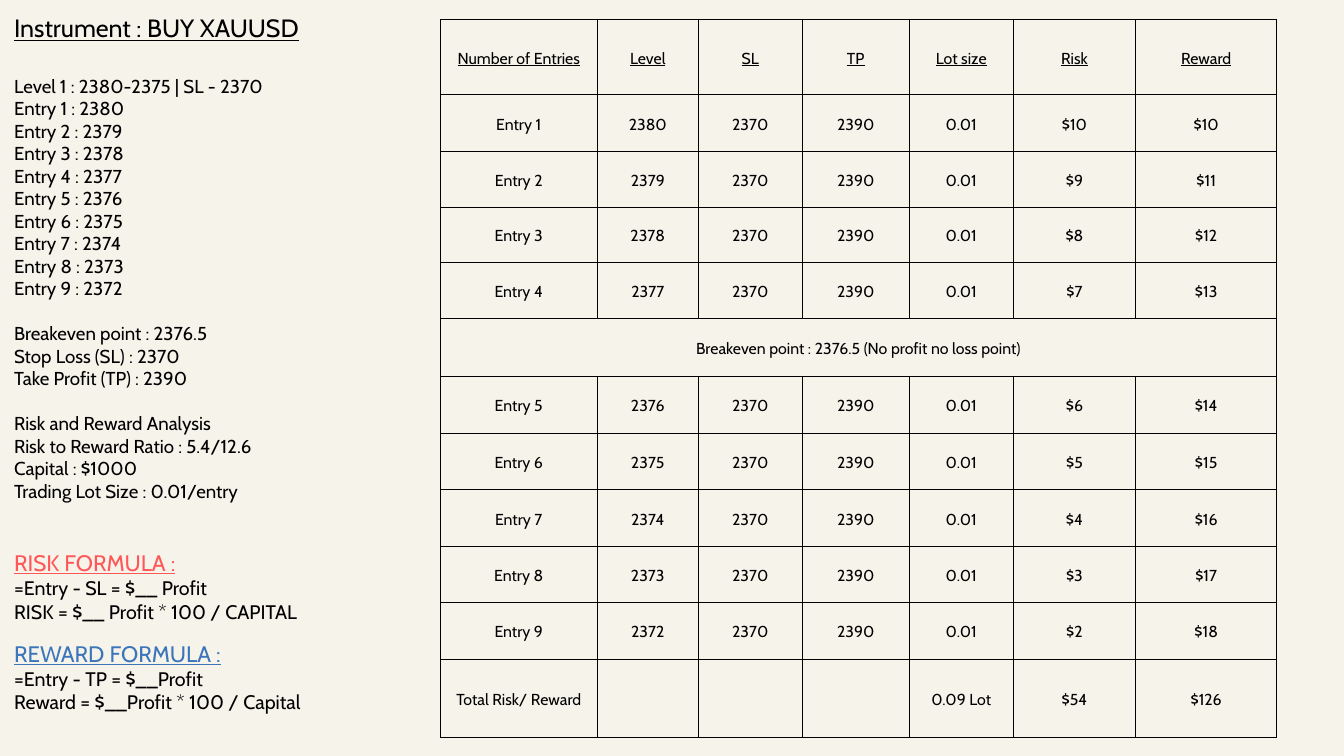
from dataclasses import dataclass

from lxml import etree
from pptx import Presentation
from pptx.dml.color import RGBColor
from pptx.enum import text as t
from pptx.oxml import ns
from pptx.util import Inches, Pt

FONT = "Cabin"
BLACK = RGBColor(0x00, 0x00, 0x00)
CREAM = RGBColor(0xF6, 0xF3, 0xEB)
RED = RGBColor(0xFF, 0x57, 0x57)
BLUE = RGBColor(0x3B, 0x75, 0xBA)

LEFT = 0.21
STOP_LOSS = 2370
TAKE_PROFIT = 2390
LEVELS = [2381 - number for number in range(1, 10)]
ENTRIES_BEFORE_BREAKEVEN = 4

HEADERS = ["Number of Entries", "Level", "SL", "TP", "Lot size", "Risk", "Reward"]
COLUMN_WIDTHS = [2.34, 1.5, 1.55, 1.59, 1.55, 1.82, 2.1]
ROW_HEIGHTS = [1.12, 0.84, 0.84, 0.81, 0.84, 0.86, 0.85, 0.84, 0.84, 0.84, 0.84, 1.16]


@dataclass
class Style:
    size: float
    line: float
    color: RGBColor = BLACK
    underline: bool = False


@dataclass
class Formula:
    top: float
    width: float
    heading: str
    color: RGBColor
    lines: list[str]


TITLE = Style(26.8, 32.1, underline=True)
BODY = Style(20, 24.1)
FORMULA_LINE = Style(21, 25.2)
HEADER_CELL = Style(17, 23.8, underline=True)
CELL = Style(17, 23.8)

SUMMARY = [
    [f"Level 1 : 2380-2375 | SL - {STOP_LOSS}"]
    + [f"Entry {number} : {level}" for number, level in enumerate(LEVELS, 1)],
    ["Breakeven point : 2376.5", f"Stop Loss (SL) : {STOP_LOSS}", f"Take Profit (TP) : {TAKE_PROFIT}"],
    ["Risk and Reward Analysis", "Risk to Reward Ratio : 5.4/12.6", "Capital : $1000", "Trading Lot Size : 0.01/entry"],
]

FORMULAS = [
    Formula(8.17, 4.56, "RISK FORMULA :", RED,
            ["=Entry - SL = $__ Profit", "RISK = $__ Profit * 100 / CAPITAL"]),
    Formula(9.52, 4.69, "REWARD FORMULA :", BLUE,
            ["=Entry - TP = $__Profit", "Reward = $__Profit * 100 / Capital"]),
]


def write(para, words: str, style: Style) -> None:
    para.text = words
    para.line_spacing = Pt(style.line)
    para.font.name = FONT
    para.font.size = Pt(style.size)
    para.font.color.rgb = style.color
    para.font.underline = style.underline


def set_frame(frame) -> None:
    frame.word_wrap = True
    frame.auto_size = t.MSO_AUTO_SIZE.SHAPE_TO_FIT_TEXT
    frame.vertical_anchor = t.MSO_ANCHOR.TOP
    frame.margin_left = frame.margin_right = frame.margin_top = frame.margin_bottom = 0


def add_text(page, top: float, width: float, height: float):
    box = page.shapes.add_textbox(Inches(LEFT), Inches(top), Inches(width), Inches(height))
    set_frame(box.text_frame)
    return box.text_frame


def next_paragraph(frame, first: bool):
    return frame.paragraphs[0] if first else frame.add_paragraph()


def add_title(page, words: str) -> None:
    title = page.shapes.title
    title.left, title.top = Inches(LEFT), Inches(0.19)
    title.width, title.height = Inches(5.64), Inches(0.45)
    set_frame(title.text_frame)
    para = title.text_frame.paragraphs[0]
    write(para, words, TITLE)
    para.alignment = t.PP_ALIGN.LEFT


def add_summary(page) -> None:
    frame = add_text(page, 1.11, 5.08, 6.34)
    for group_index, group in enumerate(SUMMARY):
        for line_index, words in enumerate(group):
            para = next_paragraph(frame, group_index == line_index == 0)
            write(para, words, BODY)
            if group_index and line_index == 0:
                para.space_before = Pt(BODY.line)


def add_formula(page, formula: Formula) -> None:
    frame = add_text(page, formula.top, formula.width, 1.08)
    write(frame.paragraphs[0], formula.heading, Style(24, 28.8, formula.color, True))
    for words in formula.lines:
        write(frame.add_paragraph(), words, FORMULA_LINE)


def set_borders(cell) -> None:
    properties = cell._tc.get_or_add_tcPr()
    for position, side in enumerate(("lnL", "lnR", "lnT", "lnB")):
        line = etree.Element(ns.qn(f"a:{side}"), w=str(Pt(0.75)))
        fill = etree.SubElement(line, ns.qn("a:solidFill"))
        etree.SubElement(fill, ns.qn("a:srgbClr"), val=str(BLACK))
        properties.insert(position, line)


def fill_cell(cell, words: str, style: Style) -> None:
    cell.fill.background()
    set_borders(cell)
    cell.vertical_anchor = t.MSO_ANCHOR.MIDDLE
    cell.margin_left = cell.margin_right = cell.margin_top = cell.margin_bottom = Inches(0.21)
    if words:
        para = cell.text_frame.paragraphs[0]
        write(para, words, style)
        para.alignment = t.PP_ALIGN.CENTER


def table_rows() -> list[list[str]]:
    entries = [
        [f"Entry {number}", str(level), str(STOP_LOSS), str(TAKE_PROFIT), "0.01",
         f"${level - STOP_LOSS}", f"${TAKE_PROFIT - level}"]
        for number, level in enumerate(LEVELS, 1)
    ]
    breakeven = ["Breakeven point : 2376.5 (No profit no loss point)"] + [""] * 6
    risk = sum(level - STOP_LOSS for level in LEVELS)
    reward = sum(TAKE_PROFIT - level for level in LEVELS)
    total = ["Total Risk/ Reward", "", "", "", "0.09 Lot", f"${risk}", f"${reward}"]
    split = ENTRIES_BEFORE_BREAKEVEN
    return [HEADERS, *entries[:split], breakeven, *entries[split:], total]


def add_entry_table(page) -> None:
    rows = table_rows()
    table = page.shapes.add_table(
        len(rows), len(HEADERS), Inches(6.55), Inches(0.29), Inches(12.46), Inches(10.66)
    ).table
    table.first_row = table.horz_banding = False
    for column, width in zip(table.columns, COLUMN_WIDTHS):
        column.width = Inches(width)
    for row, height in zip(table.rows, ROW_HEIGHTS):
        row.height = Inches(height)
    breakeven_row = ENTRIES_BEFORE_BREAKEVEN + 1
    table.cell(breakeven_row, 0).merge(table.cell(breakeven_row, len(HEADERS) - 1))
    for row_index, row in enumerate(rows):
        for column_index, words in enumerate(row):
            style = CELL if row_index else HEADER_CELL
            fill_cell(table.cell(row_index, column_index), words, style)


def main() -> None:
    deck = Presentation()
    deck.slide_width, deck.slide_height = Inches(20), Inches(11.25)
    page = deck.slides.add_slide(deck.slide_layouts[5])
    page.background.fill.solid()
    page.background.fill.fore_color.rgb = CREAM
    add_title(page, "Instrument : BUY XAUUSD")
    add_summary(page)
    add_entry_table(page)
    for formula in FORMULAS:
        add_formula(page, formula)
    deck.save("out.pptx")


if __name__ == "__main__":
    main()
